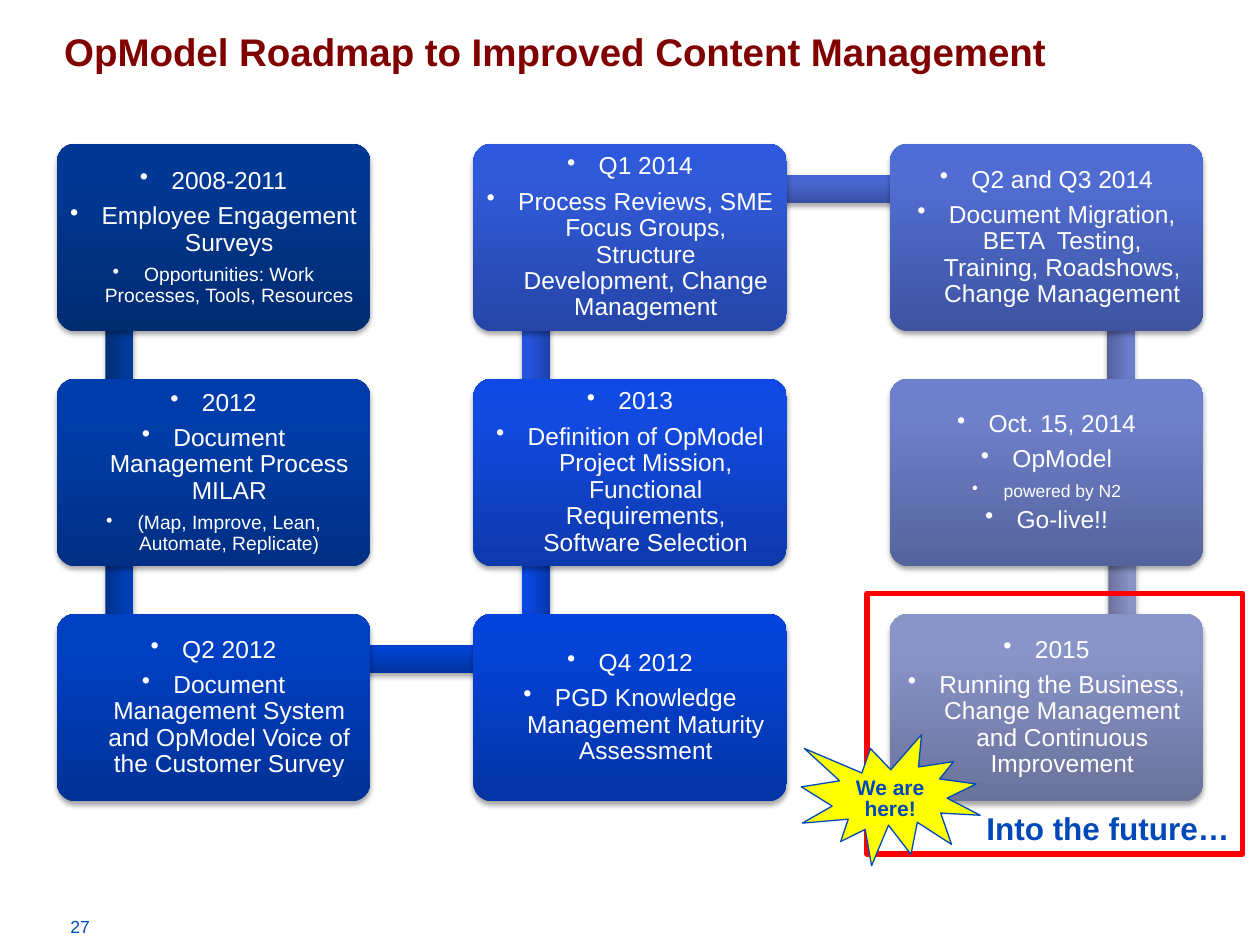
from lxml.etree import SubElement
from pptx import Presentation
from pptx.dml.color import RGBColor
from pptx.enum.shapes import MSO_SHAPE
from pptx.enum.text import MSO_ANCHOR, PP_ALIGN
from pptx.oxml.ns import qn
from pptx.util import Pt

FONT = "Arial"
COLORS = {
    "title": "800000",
    "blue": "0048B9",
    "white": "FFFFFF",
    "yellow": "FFFF00",
    "red": "FF0000",
    "shadow": "000000",
}

# Card grid
GRID_LEFT, GRID_TOP = 32.4, 82.1
COLUMN_PITCH, ROW_PITCH = 238, 134.3
CARD_WIDTH, CARD_HEIGHT = 179.3, 107.3
BAR_THICKNESS = 15.8
GRADIENT_POSITIONS = (0, 80, 100)

# Column, row, gradient from bottom to top, (text, size) paragraphs
CARDS = [
    (0, 0, ("002B71", "003893", "003994"),
     [("2008-2011", 14), ("Employee Engagement Surveys", 14),
      ("Opportunities: Work Processes, Tools, Resources", 11)]),
    (0, 1, ("002F83", "003DAB", "003DAB"),
     [("2012", 14), ("Document Management Process MILAR", 14),
      ("(Map, Improve, Lean, Automate, Replicate)", 11)]),
    (0, 2, ("003196", "0040C3", "0040C3"),
     [("Q2 2012", 14),
      ("Document Management System and OpModel Voice of the Customer Survey", 14)]),
    (1, 2, ("0334A5", "0443D6", "0042DB"),
     [("Q4 2012", 14), ("PGD Knowledge Management Maturity Assessment", 14)]),
    (1, 1, ("0E39AD", "124AE0", "0E49E5"),
     [("2013", 14),
      ("Definition of OpModel Project Mission, Functional Requirements, "
       "Software Selection", 14)]),
    (1, 0, ("2645A7", "315AD9", "2E59DD"),
     [("Q1 2014", 14),
      ("Process Reviews, SME Focus Groups, Structure Development, "
       "Change Management", 14)]),
    (2, 0, ("3E54A1", "516DD1", "4F6CD4"),
     [("Q2 and Q3 2014", 14),
      ("Document Migration, BETA  Testing, Training, Roadshows, "
       "Change Management", 14)]),
    (2, 1, ("55639C", "6F80CB", "6D80CE"),
     [("Oct. 15, 2014", 14), ("OpModel", 14), ("powered by N2", 10),
      ("Go-live!!", 14)]),
    (2, 2, ("6A729A", "8994C8", "8993CA"),
     [("2015", 14),
      ("Running the Business, Change Management and Continuous Improvement", 14)]),
]

# Centre x, centre y, length, rotation, gradient
BARS = [
    (68.1, 175.7, 133.2, 90, ("002E77", "003B9B", "003C9B")),
    (68.1, 309.6, 133.2, 90, ("00318B", "003FB5", "0040B6")),
    (187.9, 376.6, 237.6, 0, ("00339F", "0042CF", "0042D0")),
    (306.4, 309.6, 133.2, 270, ("0837AC", "0A47DF", "0646E4")),
    (306.4, 175.7, 133.2, 270, ("1D41AB", "2554DE", "2253E3")),
    (425.5, 108, 237.6, 0, ("3950A3", "4A68D3", "4767D7")),
    (640.4, 189.4, 133.2, 90, ("53619D", "6B7ECC", "6A7DCF")),
    (641.2, 306, 133.2, 90, ("6A719A", "8993C8", "8993CA")),
]


def color(name):
    return RGBColor.from_string(COLORS[name])


def add_shape(slide, kind, left, top, width, height):
    shape = slide.shapes.add_shape(kind, Pt(left), Pt(top), Pt(width), Pt(height))
    shape.shadow.inherit = False
    return shape


def style_raised(shape, stops):
    """Vertical gradient, no outline, soft shadow below."""
    shape.fill.gradient()
    shape.fill.gradient_angle = 90
    properties = shape.element.spPr
    stop_list = properties.find(qn("a:gradFill")).find(qn("a:gsLst"))
    for stop in list(stop_list):
        stop_list.remove(stop)
    for position, value in zip(GRADIENT_POSITIONS, stops):
        stop = SubElement(stop_list, qn("a:gs"), pos=str(position * 1000))
        SubElement(stop, qn("a:srgbClr"), val=value)
    shape.line.fill.background()
    shadow = SubElement(properties.find(qn("a:effectLst")), qn("a:outerShdw"),
                        blurRad=str(Pt(3.1)), dist=str(Pt(1.8)), dir="5400000",
                        rotWithShape="0")
    shade = SubElement(shadow, qn("a:srgbClr"), val=COLORS["shadow"])
    SubElement(shade, qn("a:alpha"), val="35000")


def format_font(paragraph, size, color_name, bold=False):
    for run in paragraph.runs:
        run.font.name = FONT
        run.font.size = Pt(size)
        run.font.bold = bold
        run.font.color.rgb = color(color_name)


def add_bullet(paragraph):
    properties = paragraph._p.get_or_add_pPr()
    properties.set("marL", str(Pt(18)))
    properties.set("indent", str(-Pt(18)))
    SubElement(properties, qn("a:buChar"), char="•")


def add_bar(slide, center_x, center_y, length, rotation, stops):
    bar = add_shape(slide, MSO_SHAPE.RECTANGLE, center_x - length / 2,
                    center_y - BAR_THICKNESS / 2, length, BAR_THICKNESS)
    bar.rotation = rotation
    style_raised(bar, stops)


def add_card(slide, column, row, stops, lines):
    card = add_shape(slide, MSO_SHAPE.ROUNDED_RECTANGLE,
                     GRID_LEFT + column * COLUMN_PITCH,
                     GRID_TOP + row * ROW_PITCH, CARD_WIDTH, CARD_HEIGHT)
    card.adjustments[0] = 0.1
    style_raised(card, stops)
    frame = card.text_frame
    frame.word_wrap = True
    frame.vertical_anchor = MSO_ANCHOR.MIDDLE
    frame.margin_left = frame.margin_right = Pt(4.2)
    frame.margin_top = frame.margin_bottom = Pt(4.2)
    frame.text = "\n".join(text for text, _ in lines)
    for paragraph, (_, size) in zip(frame.paragraphs, lines):
        add_bullet(paragraph)
        paragraph.alignment = PP_ALIGN.CENTER
        paragraph.line_spacing = 0.9
        paragraph.space_after = Pt(round(size * 0.35, 2))
        format_font(paragraph, size, "white")


def add_label(slide, text, left, top, width, height, size, bold=True,
              alignment=PP_ALIGN.LEFT, line_spacing=0.8):
    label = slide.shapes.add_textbox(Pt(left), Pt(top), Pt(width), Pt(height))
    label.text_frame.word_wrap = True
    label.text_frame.text = text
    paragraph = label.text_frame.paragraphs[0]
    paragraph.alignment = alignment
    paragraph.line_spacing = line_spacing
    format_font(paragraph, size, "blue", bold)


def set_title(slide, text):
    title = slide.shapes.title
    title.left, title.top, title.width, title.height = Pt(29.5), Pt(17.3), Pt(650), Pt(28.8)
    title.text_frame.text = text
    title.text_frame.vertical_anchor = MSO_ANCHOR.TOP
    paragraph = title.text_frame.paragraphs[0]
    paragraph.alignment = PP_ALIGN.LEFT
    paragraph.line_spacing = 0.8
    format_font(paragraph, 22, "title", bold=True)


def main():
    presentation = Presentation()
    presentation.slide_width, presentation.slide_height = Pt(720), Pt(540)
    slide = presentation.slides.add_slide(presentation.slide_layouts[5])
    set_title(slide, "OpModel Roadmap to Improved Content Management")

    # Roadmap: bars lie behind the cards
    for bar in BARS:
        add_bar(slide, *bar)
    for card in CARDS:
        add_card(slide, *card)

    # Frame around the future step
    future_frame = add_shape(slide, MSO_SHAPE.RECTANGLE, 495.4, 339.1, 214.6, 149)
    future_frame.fill.background()
    future_frame.line.color.rgb = color("red")
    future_frame.line.width = Pt(3)

    # "We are here" burst
    burst = add_shape(slide, MSO_SHAPE.EXPLOSION1, 457.9, 419.8, 102.2, 74.9)
    burst.fill.solid()
    burst.fill.fore_color.rgb = color("yellow")
    burst.line.color.rgb = color("blue")
    burst.line.width = Pt(0.75)
    add_label(slide, "We are here!", 475.2, 442.1, 67, 30.2, 12,
              alignment=PP_ALIGN.CENTER)
    add_label(slide, "Into the future…", 556.6, 463, 158, 24.5, 18)

    # Page number
    add_label(slide, "27", 33.1, 519.8, 166.3, 19.4, 10, bold=False, line_spacing=1)
    presentation.save("out.pptx")


if __name__ == "__main__":
    main()
